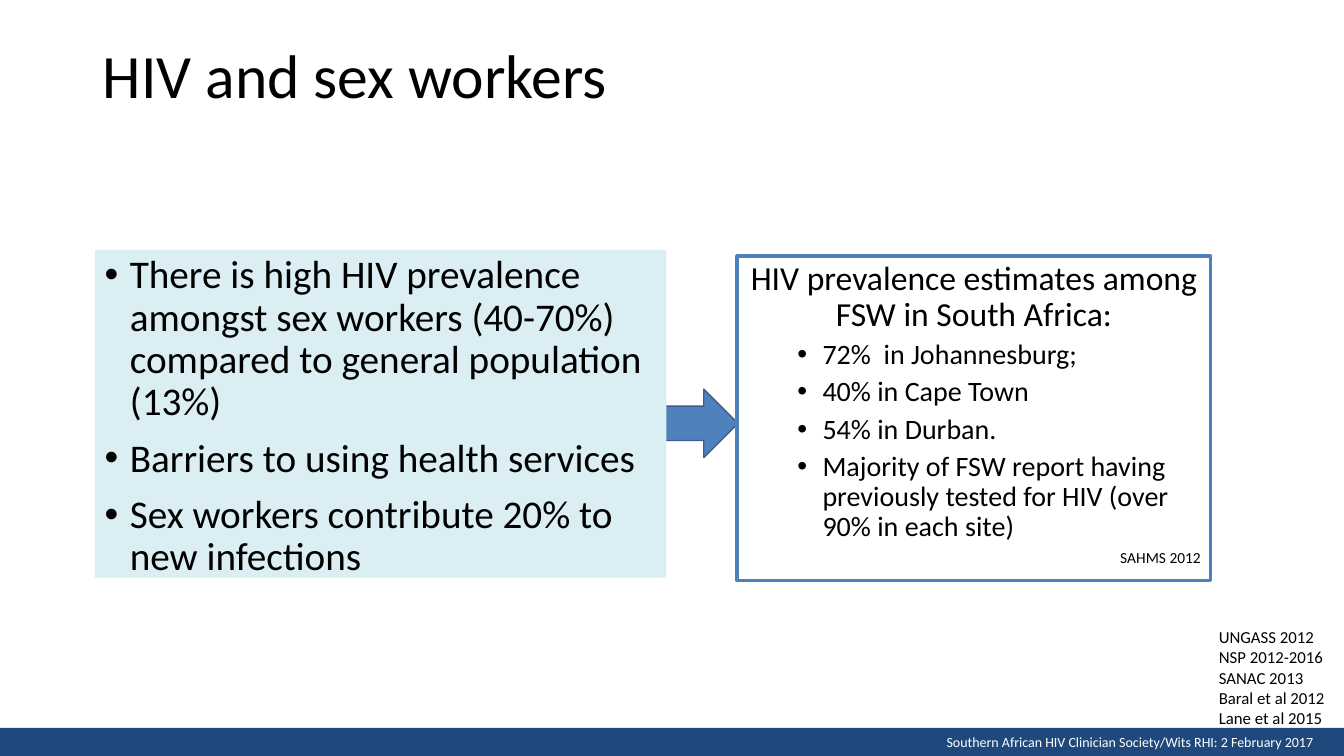
from pptx import Presentation
from pptx.dml.color import RGBColor
from pptx.enum import shapes, text
from pptx.oxml.ns import qn
from pptx.util import Inches, Pt
from lxml import etree

FONT = "Calibri"
HUES = {
    "black": "000000",
    "white": "FFFFFF",
    "navy": "1F497D",
    "blue": "4F81BD",
    "edge": "3A5F8C",
    "pale": "DBEEF4",
}
KIND = shapes.MSO_SHAPE
ALIGN = text.PP_ALIGN
GROW = text.MSO_AUTO_SIZE.SHAPE_TO_FIT_TEXT

FACTS = [
    "There is high HIV prevalence amongst sex workers (40-70%) "
    "compared to general population (13%)",
    "Barriers to using health services",
    "Sex workers contribute 20% to new infections",
]
RATES = [
    "72%  in Johannesburg;",
    "40% in Cape Town",
    "54% in Durban.",
    "Majority of FSW report having previously tested for HIV (over 90% in each site)",
]
REFS = ["UNGASS 2012", "NSP 2012-2016", "SANAC 2013", "Baral et al 2012", "Lane et al 2015"]


def hue(name):
    return RGBColor.from_string(HUES[name])


def add_box(slide, kind, place, fill, line=None, width=1):
    """Add a flat preset shape with top-aligned text."""
    box = slide.shapes.add_shape(kind, *map(Inches, place))
    box.shadow.inherit = False
    box.fill.solid()
    box.fill.fore_color.rgb = hue(fill)
    if line:
        box.line.color.rgb = hue(line)
        box.line.width = Pt(width)
    else:
        box.line.fill.background()
    box.text_frame.word_wrap = True
    box.text_frame.vertical_anchor = text.MSO_ANCHOR.TOP
    return box


def style(para, size, color="black", align=ALIGN.LEFT, gap=0, lines=1.0):
    """Format a paragraph and its runs."""
    para.alignment = align
    para.line_spacing = lines
    para.space_before = Pt(gap)
    for run in para.runs:
        run.font.name = FONT
        run.font.size = Pt(size)
        run.font.color.rgb = hue(color)


def indent(para, left, hang=0, mark=None):
    """Set the left margin, and hang a bullet in it if asked."""
    props = para._p.get_or_add_pPr()
    props.set("marL", str(Inches(left)))
    props.set("indent", str(-Inches(hang)))
    if mark:
        face = etree.SubElement(props, qn("a:buFont"))
        face.set("typeface", "Arial")
        etree.SubElement(props, qn("a:buChar")).set("char", mark)


def add_note(slide, place, rows, size, color="black", wrap=True):
    """Add a plain text box with one paragraph per row."""
    frame = slide.shapes.add_textbox(*map(Inches, place)).text_frame
    frame.word_wrap = wrap
    frame.auto_size = GROW
    frame.text = "\n".join(rows)
    for para in frame.paragraphs:
        style(para, size, color)


def set_title(slide, words):
    title = slide.shapes.title
    title.left, title.top = Inches(0.92), Inches(0.4)
    title.width, title.height = Inches(11.5), Inches(1.45)
    frame = title.text_frame
    frame.text = words
    frame.vertical_anchor = text.MSO_ANCHOR.TOP
    style(frame.paragraphs[0], 44, lines=0.9)


def add_facts(slide):
    box = add_box(slide, KIND.RECTANGLE, (0.94, 2.48, 5.67, 3.25), "pale")
    frame = box.text_frame
    frame.auto_size = GROW
    frame.text = "\n".join(FACTS)
    for para in frame.paragraphs:
        style(para, 28, gap=10, lines=0.9)
        indent(para, 0.25, 0.25, "•")


def add_rates(slide):
    box = add_box(slide, KIND.RECTANGLE, (7.31, 2.54, 4.7, 3.22), "white", "blue", 2.25)
    frame = box.text_frame
    head = "HIV prevalence estimates among FSW in South Africa:"
    frame.text = "\n".join([head, *RATES, "SAHMS 2012"])
    first, *items, last = frame.paragraphs
    style(first, 24, align=ALIGN.CENTER, gap=10, lines=0.9)
    for para in items:
        para.level = 1
        style(para, 20, gap=5, lines=0.9)
        indent(para, 0.75, 0.25, "•")
    last.level = 1
    style(last, 11, align=ALIGN.RIGHT, gap=5, lines=0.9)
    indent(last, 0.5)


def main():
    deck = Presentation()
    deck.slide_width, deck.slide_height = Inches(13.33), Inches(7.5)
    slide = deck.slides.add_slide(deck.slide_layouts[5])

    # Footer band
    add_box(slide, KIND.RECTANGLE, (0, 7.22, 13.33, 0.28), "navy")
    credit = "Southern African HIV Clinician Society/Wits RHI: 2 February 2017"
    add_note(slide, (9.29, 7.23, 3.96, 0.27), [credit], 10, "white", wrap=False)

    # Title and the two linked panels
    set_title(slide, "HIV and sex workers")
    add_box(slide, KIND.RIGHT_ARROW, (6.33, 3.86, 0.99, 0.68), "blue", "edge")
    add_facts(slide)
    add_rates(slide)

    # References
    add_note(slide, (11.99, 6.17, 1.34, 1.11), REFS, 12)

    deck.save("out.pptx")


if __name__ == "__main__":
    main()
